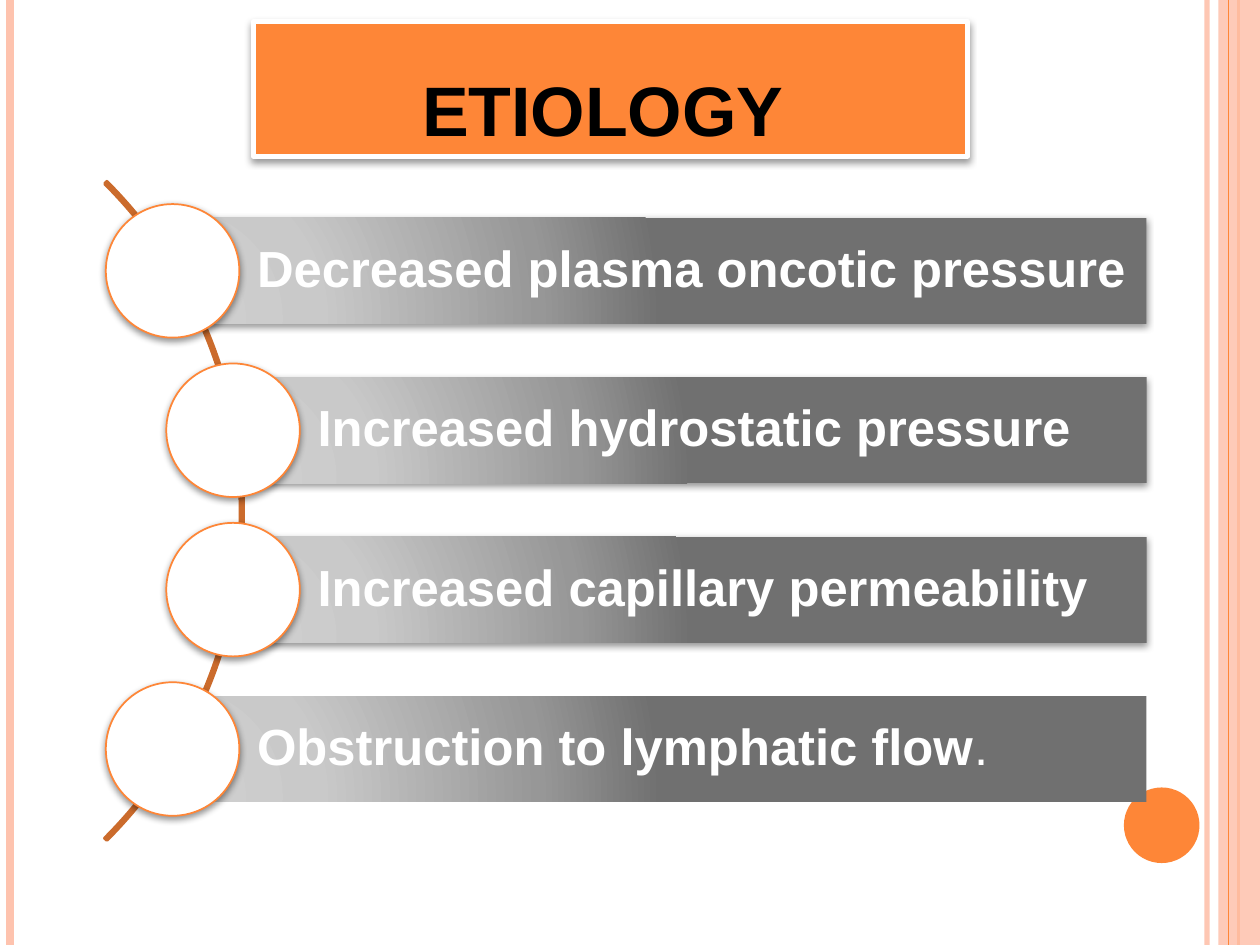
from lxml.etree import SubElement
from pptx import Presentation
from pptx.dml.color import RGBColor
from pptx.enum.shapes import MSO_CONNECTOR, MSO_SHAPE
from pptx.enum.text import MSO_ANCHOR, PP_ALIGN
from pptx.oxml import parse_xml
from pptx.oxml.ns import nsdecls, qn
from pptx.util import Inches, Pt

TITLE = "ETIOLOGY "
CAUSES = [
    ("Decreased plasma oncotic pressure", "", 1.37),
    ("Increased hydrostatic pressure", "", 1.85),
    ("Increased capillary permeability", "", 1.85),
    ("Obstruction to lymphatic flow", ".", 1.37),
]
STRIPES = [(9.58, "pale", 3, 93), (0.08, "pale", 4.5, 100), (9.83, "accent", 1.5, 100)]
EDGE_STRIPE = (9.75, "accent", 0.75, 100)
THEME = {
    "accent": "FE8637", "pale": "FEC3AE", "arc": "CB6B2C", "white": "FFFFFF", "black": "000000",
    "gradient": [(0, "D1D1D1"), (30, "C9C9C9"), (75, "979797"), (100, "707070")],
    "font": "Arial", "title": 40, "body": 29,
}
BAR_TOP, BAR_STEP, BAR_H, BAR_RIGHT, NODE = 1.73, 1.265, 0.84, 9.1, 1.06


def rgb(name):
    return RGBColor.from_string(THEME[name])


def set_alpha(elm, percent):
    if percent < 100:
        clr = next(elm.iter(qn("a:srgbClr")))
        SubElement(clr, qn("a:alpha"), val=str(percent * 1000))


def add_shape(slide, kind, box, fill=None, line=None, width=1):
    s = slide.shapes.add_shape(kind, *map(Inches, box))
    s.shadow.inherit = False
    if fill:
        s.fill.solid()
        s.fill.fore_color.rgb = rgb(fill)
    else:
        s.fill.background()
    if line:
        s.line.color.rgb = rgb(line)
        s.line.width = Pt(width)
    else:
        s.line.fill.background()
    return s


def add_stripe(slide, x, color, width, alpha):
    c = slide.shapes.add_connector(MSO_CONNECTOR.STRAIGHT, Inches(x), 0, Inches(x), Inches(7.5))
    c.line.color.rgb = rgb(color)
    c.line.width = Pt(width)
    spPr = c._element.spPr
    set_alpha(spPr, alpha)
    SubElement(spPr, qn("a:effectLst"))


def add_shadow(s, alpha=42, dist=1.6):
    effects = s._element.spPr.find(qn("a:effectLst"))
    shadow = SubElement(effects, qn("a:outerShdw"), blurRad=str(Pt(4)), dist=str(Pt(dist)),
                        dir="5400000", rotWithShape="0")
    clr = SubElement(shadow, qn("a:srgbClr"), val=THEME["black"])
    set_alpha(shadow, alpha)
    return clr


def set_gradient(s):
    stops = "".join(f'<a:gs pos="{pos * 1000}"><a:srgbClr val="{c}"/></a:gs>'
                    for pos, c in THEME["gradient"])
    grad = parse_xml(
        f'<a:gradFill {nsdecls("a")} rotWithShape="1"><a:gsLst>{stops}</a:gsLst><a:path path="circle">'
        '<a:fillToRect l="5000" t="100000" r="120000" b="10000"/></a:path></a:gradFill>')
    spPr = s._element.spPr
    spPr.replace(spPr.find(qn("a:noFill")), grad)


def style(r, size, color, bold=True):
    r.font.name = THEME["font"]
    r.font.size = Pt(size)
    r.font.bold = bold
    r.font.color.rgb = rgb(color)


def add_cause(slide, i, text, tail, left):
    top = BAR_TOP + i * BAR_STEP
    s = add_shape(slide, MSO_SHAPE.RECTANGLE, (left, top, BAR_RIGHT - left, BAR_H))
    set_gradient(s)
    add_shadow(s)
    tf = s.text_frame
    tf.word_wrap = True
    tf.vertical_anchor = MSO_ANCHOR.MIDDLE
    tf.margin_left = Inches(0.67)
    tf.margin_right = tf.margin_top = tf.margin_bottom = Inches(0.08)
    p = tf.paragraphs[0]
    p.text = text
    p.alignment = PP_ALIGN.LEFT
    p.line_spacing = 0.9
    style(p.runs[0], THEME["body"], "white")
    if tail:
        r = p.add_run()
        r.text = tail
        style(r, THEME["body"], "white", False)
    node = add_shape(slide, MSO_SHAPE.OVAL,
                     (left - NODE / 2, top + (BAR_H - NODE) / 2, NODE, NODE), "white", "accent")
    add_shadow(node)


def add_title(slide):
    s = add_shape(slide, MSO_SHAPE.RECTANGLE, (2.01, 0.17, 5.67, 1.07), "accent", "white", 2.75)
    add_shadow(s, 40, 2)
    tf = s.text_frame
    tf.word_wrap = True
    tf.vertical_anchor = MSO_ANCHOR.BOTTOM
    p = tf.paragraphs[0]
    p.text = TITLE
    p.alignment = PP_ALIGN.CENTER
    r = p.runs[0]
    style(r, THEME["title"], "black")
    r.font._element.set("cap", "small")


def main():
    """Build the etiology slide with its four causes along an arc."""
    prs = Presentation()
    prs.slide_width, prs.slide_height = Inches(10), Inches(7.5)
    slide = prs.slides.add_slide(prs.slide_layouts[6])
    for stripe in STRIPES:
        add_stripe(slide, *stripe)
    band = add_shape(slide, MSO_SHAPE.RECTANGLE, (9.67, 0, 0.33, 7.5), "pale")
    set_alpha(band._element.spPr, 87)
    add_stripe(slide, *EDGE_STRIPE)
    add_shape(slide, MSO_SHAPE.OVAL, (8.92, 6.25, 0.6, 0.6), "accent")
    arc = add_shape(slide, MSO_SHAPE.BLOCK_ARC, (-5.46, 0.36, 7.39, 7.39), None, "arc", 2)
    for i, value in enumerate((189, 27, 0.003)):
        arc.adjustments[i] = value
    for i, cause in enumerate(CAUSES):
        add_cause(slide, i, *cause)
    add_title(slide)
    prs.save("out.pptx")


if __name__ == "__main__":
    main()
